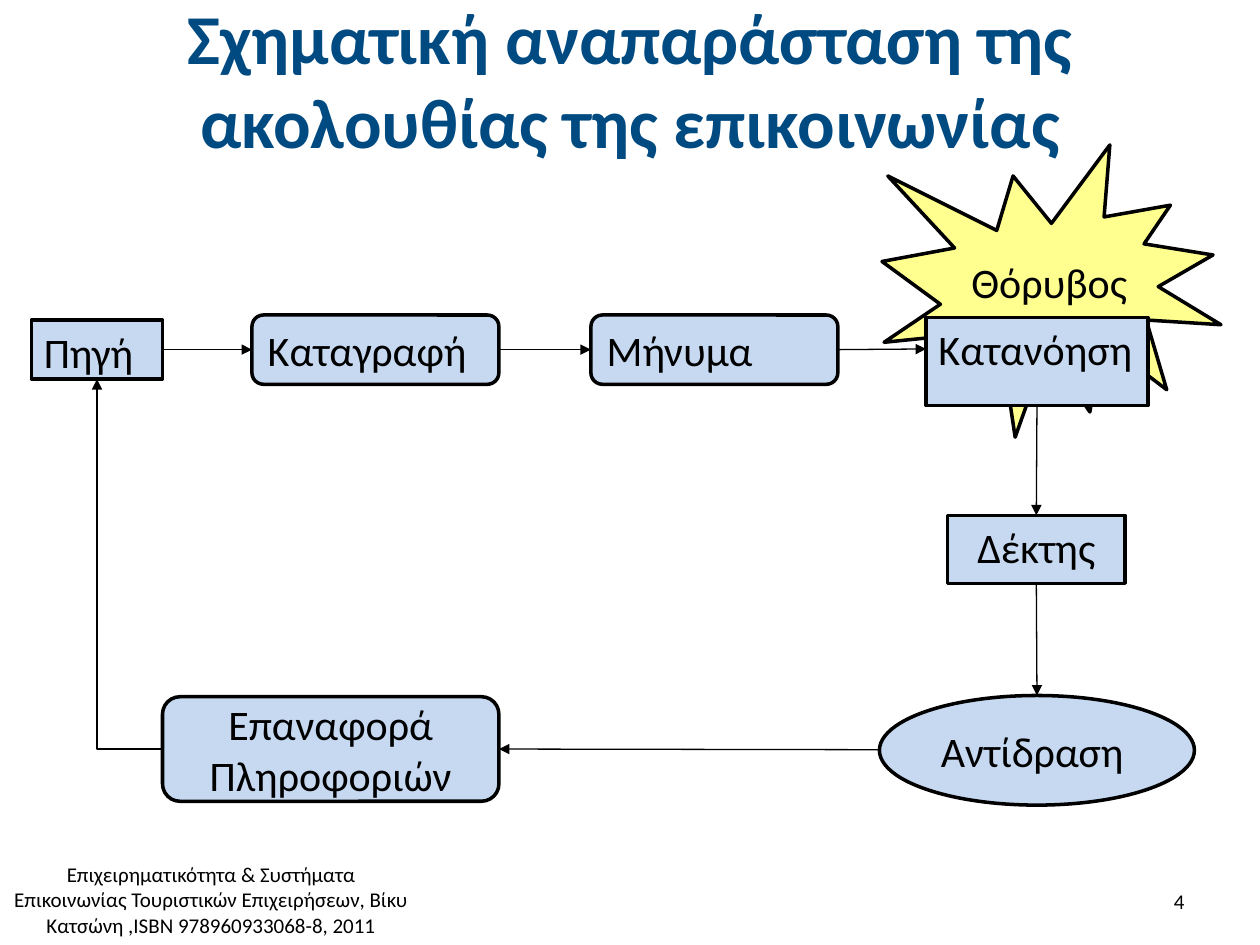
from lxml import etree
from pptx import Presentation
from pptx.dml.color import RGBColor
from pptx.enum.shapes import MSO_CONNECTOR, MSO_SHAPE
from pptx.enum.text import MSO_ANCHOR, PP_ALIGN
from pptx.oxml.ns import qn
from pptx.util import Inches, Pt

BLACK, BLUE, YELLOW, NAVY = "000000", "C6D9F1", "FFFF8F", "004A82"
LEFT, CENTER, RIGHT = PP_ALIGN.LEFT, PP_ALIGN.CENTER, PP_ALIGN.RIGHT
TOP, MIDDLE = MSO_ANCHOR.TOP, MSO_ANCHOR.MIDDLE
TOP_SITE, LEFT_SITE, BOTTOM_SITE, RIGHT_SITE = range(4)


def color(hex_string):
    return RGBColor.from_string(hex_string)


def write(shape, text, size, align, anchor, text_color=BLACK, bold=False):
    frame = shape.text_frame
    frame.word_wrap = True
    frame.vertical_anchor = anchor
    paragraph = frame.paragraphs[0]
    paragraph.alignment = align
    run = paragraph.add_run()
    run.text = text
    run.font.name = "Calibri"
    run.font.size = Pt(size)
    run.font.bold = bold
    run.font.color.rgb = color(text_color)


presentation = Presentation()
presentation.slide_width = Inches(10)
presentation.slide_height = Inches(7.5)
slide = presentation.slides.add_slide(presentation.slide_layouts[6])

# Title, slide number and footer
texts = [
    ("Σχηματική αναπαράσταση της ακολουθίας της επικοινωνίας",
     0, 0.13, 10, 0.99, 40, CENTER, MIDDLE, NAVY, True),
    ("4", 7.17, 6.95, 2.33, 0.4, 12, RIGHT, MIDDLE, BLACK, False),
    ("Επιχειρηματικότητα & Συστήματα Επικοινωνίας Τουριστικών Επιχειρήσεων, "
     "Βίκυ Κατσώνη ,ISBN 978960933068-8, 2011",
     0, 6.79, 3.35, 0.71, 12, CENTER, TOP, BLACK, False),
]
for text, left, top, width, height, *style in texts:
    box = slide.shapes.add_textbox(Inches(left), Inches(top), Inches(width), Inches(height))
    write(box, text, *style)

# Stages of the communication cycle, with the noise behind the understanding
RECTANGLE, ROUNDED = MSO_SHAPE.RECTANGLE, MSO_SHAPE.ROUNDED_RECTANGLE
stages = [
    ("source", "Πηγή", RECTANGLE, 0.25, 2.54, 1.04, 0.47, BLUE, LEFT, TOP),
    ("encoding", "Καταγραφή", ROUNDED, 2, 2.5, 1.96, 0.55, BLUE, LEFT, MIDDLE),
    ("message", "Μήνυμα", ROUNDED, 4.69, 2.5, 1.96, 0.55, BLUE, LEFT, MIDDLE),
    ("noise", "Θόρυβος", MSO_SHAPE.EXPLOSION1, 7, 1.15, 2.69, 2.32, YELLOW, CENTER, MIDDLE),
    ("understanding", "Κατανόηση", RECTANGLE, 7.35, 2.52, 1.76, 0.7, BLUE, LEFT, TOP),
    ("receiver", "Δέκτης", RECTANGLE, 7.52, 4.09, 1.41, 0.54, BLUE, CENTER, TOP),
    ("reaction", "Αντίδραση ", MSO_SHAPE.OVAL, 6.98, 5.52, 2.5, 0.87, BLUE, CENTER, MIDDLE),
    ("feedback", "Επαναφορά Πληροφοριών", ROUNDED, 1.29, 5.53, 2.67, 0.83, BLUE, CENTER, MIDDLE),
]
shapes = {}
for name, text, kind, left, top, width, height, fill, align, anchor in stages:
    shape = slide.shapes.add_shape(kind, Inches(left), Inches(top), Inches(width), Inches(height))
    shape.shadow.inherit = False
    shape.fill.solid()
    shape.fill.fore_color.rgb = color(fill)
    shape.line.color.rgb = color(BLACK)
    shape.line.width = Pt(2)
    write(shape, text, 24, align, anchor)
    shapes[name] = shape

# Arrows: start and end points, then the stage side each end is joined to
STRAIGHT, ELBOW = MSO_CONNECTOR.STRAIGHT, MSO_CONNECTOR.ELBOW
arrows = [
    (STRAIGHT, 1.29, 2.77, 2, 2.77, ("source", RIGHT_SITE), ("encoding", LEFT_SITE)),
    (STRAIGHT, 3.96, 2.77, 4.69, 2.77, ("encoding", RIGHT_SITE), ("message", LEFT_SITE)),
    (STRAIGHT, 6.65, 2.77, 7.35, 2.77, ("message", RIGHT_SITE), None),
    (STRAIGHT, 8.23, 3.22, 8.23, 4.09, ("understanding", BOTTOM_SITE), ("receiver", TOP_SITE)),
    (STRAIGHT, 8.23, 4.63, 8.23, 5.52, ("receiver", BOTTOM_SITE), ("reaction", TOP_SITE)),
    (STRAIGHT, 6.98, 5.95, 3.96, 5.94, None, ("feedback", RIGHT_SITE)),
    (ELBOW, 1.29, 5.94, 0.77, 3.01, ("feedback", LEFT_SITE), ("source", BOTTOM_SITE)),
]
for kind, x1, y1, x2, y2, start, end in arrows:
    arrow = slide.shapes.add_connector(kind, Inches(x1), Inches(y1), Inches(x2), Inches(y2))
    if start:
        arrow.begin_connect(shapes[start[0]], start[1])
    if end:
        arrow.end_connect(shapes[end[0]], end[1])
    arrow.line.color.rgb = color(BLACK)
    arrow.line.width = Pt(0.75)
    properties = arrow._element.spPr
    if kind == ELBOW:
        # A single bend instead of the default two
        properties.find(qn("a:prstGeom")).set("prst", "bentConnector2")
    etree.SubElement(properties.find(qn("a:ln")), qn("a:tailEnd"), type="triangle")
    etree.SubElement(properties, qn("a:effectLst"))

presentation.save("out.pptx")
